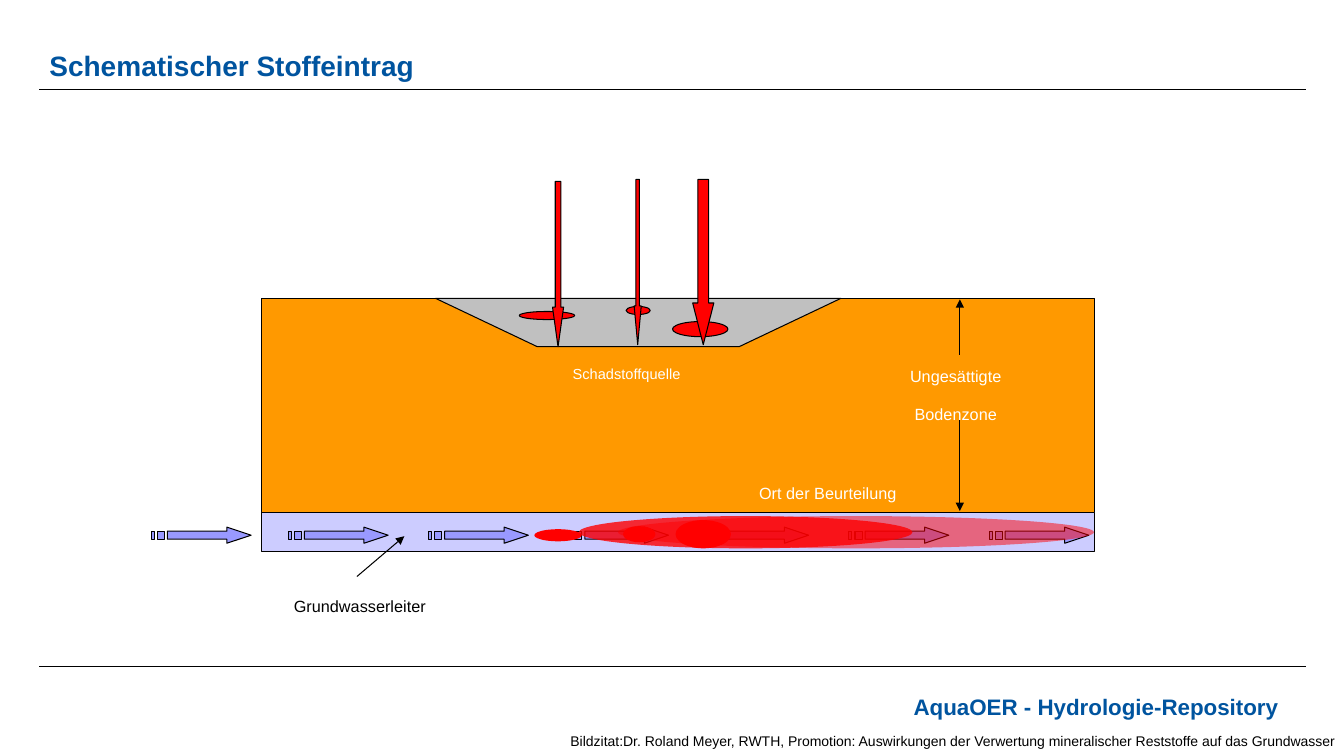
from lxml.etree import SubElement
from pptx import Presentation
from pptx.dml.color import RGBColor
from pptx.enum.shapes import MSO_CONNECTOR, MSO_SHAPE
from pptx.enum.text import MSO_ANCHOR, PP_ALIGN
from pptx.oxml.ns import qn
from pptx.util import Inches, Pt

W, H = 13.33, 7.5
BLUE, BLACK, WHITE, RED = "00549F", "000000", "FFFFFF", "FF0000"
ORANGE, GREY, LAVENDER, VIOLET = "FF9900", "C0C0C0", "CCCCFF", "9999FF"

LEFT, TOP, WIDTH = 2.59, 2.96, 8.27
SOIL_H, AQUIFER_H = 2.12, 0.39
AQUIFER_TOP = TOP + SOIL_H
FLOW_Y = AQUIFER_TOP + 0.23
FLOW_XS = [1.5] + [2.86 + 1.39 * i for i in range(6)]

PIT = [(4.32, TOP), (5.33, 3.44), (7.33, 3.44), (8.34, TOP)]
FLOW_PARTS = [
    [(0.75, -0.08), (0.75, -0.04), (0.16, -0.04), (0.16, 0.04),
     (0.75, 0.04), (0.75, 0.08), (0.99, 0)],
    [(0.06, -0.04), (0.06, 0.04), (0.13, 0.04), (0.13, -0.04)],
    [(0, -0.04), (0, 0.04), (0.03, 0.04), (0.03, -0.04)],
]
SOURCES = [(6.67, 3.19, 0.55, 0.15), (6.21, 3.04, 0.24, 0.08), (5.15, 3.09, 0.55, 0.08)]
PLUMES = [
    ((5.74, 5.12, 3.31, 0.32), 80),
    ((6.13, 5.12, 4.72, 0.32), 50),
    ((5.3, 5.25, 0.47, 0.12), 100),
    ((6.18, 5.22, 0.32, 0.16), 100),
    ((6.7, 5.16, 0.55, 0.28), 100),
]
INPUTS = [((6.87, 1.78, 0.21, 1.64), 1.97), ((6.29, 1.78, 0.07, 1.64), 5.48),
          ((5.48, 1.8, 0.11, 1.64), 3.57)]
RULES = [(0.39, y, 12.95, y) for y in (0.89, 6.61)]
POINTERS = [(9.52, 4.12, 9.52, 5.07), (9.52, 3.52, 9.52, 2.97), (3.54, 5.72, 4.01, 5.32)]
LABELS = [
    ("Ort der Beurteilung", (7.43, 4.56, 1.89, 0.33), dict(color=WHITE, size=20)),
    ("Grundwasserleiter", (2.39, 5.68, 2.36, 0.33), dict(size=20, align=PP_ALIGN.CENTER)),
    ("Schadstoffquelle", (5.37, 3.4, 1.69, 0.3),
     dict(color=WHITE, size=18, align=PP_ALIGN.CENTER)),
    ("Ungesättigte\nBodenzone", (8.53, 3.4, 1.9, 0.66),
     dict(color=WHITE, size=20, align=PP_ALIGN.CENTER)),
]
CREDIT = ("Bildzitat:Dr. Roland Meyer, RWTH, Promotion: Auswirkungen der Verwertung "
          "mineralischer Reststoffe auf das Grundwasser")


def rgb(value):
    return RGBColor.from_string(value)


def paint(sp, fill, outline=True, alpha=100):
    sp.shadow.inherit = False
    sp.fill.solid()
    sp.fill.fore_color.rgb = rgb(fill)
    if alpha < 100:
        color = sp.fill._xPr.find(qn("a:solidFill"))[0]
        SubElement(color, qn("a:alpha")).set("val", str(alpha * 1000))
    if outline:
        sp.line.color.rgb = rgb(BLACK)
        sp.line.width = Pt(0.75)
    else:
        sp.line.fill.background()


def add_preset(s, kind, box, fill, **look):
    sp = s.shapes.add_shape(kind, *map(Inches, box))
    paint(sp, fill, **look)
    return sp


def add_outline(s, parts, fill, x=0, y=0):
    contours = [[(Inches(x + px), Inches(y + py)) for px, py in part] for part in parts]
    builder = s.shapes.build_freeform(*contours[0][0])
    for i, points in enumerate(contours):
        if i:
            builder.move_to(*points[0])
        builder.add_line_segments(points[1:], close=True)
    paint(builder.convert_to_shape(), fill)


def add_line(s, ends, arrow=False):
    c = s.shapes.add_connector(MSO_CONNECTOR.STRAIGHT, *map(Inches, ends))
    c.line.color.rgb = rgb(BLACK)
    c.line.width = Pt(0.75)
    if arrow:
        SubElement(c.line._get_or_add_ln(), qn("a:tailEnd")).set("type", "triangle")
    SubElement(c._element.spPr, qn("a:effectLst"))


def add_text(s, text, box, size=10, color=BLACK, bold=False, align=PP_ALIGN.LEFT,
             anchor=MSO_ANCHOR.TOP, wrap=True, subscript=False, insets=(0.1, 0.05)):
    tf = s.shapes.add_textbox(*map(Inches, box)).text_frame
    tf.word_wrap = wrap
    tf.vertical_anchor = anchor
    tf.margin_left = tf.margin_right = Inches(insets[0])
    tf.margin_top = tf.margin_bottom = Inches(insets[1])
    for i, line in enumerate(text.split("\n")):
        p = tf.paragraphs[0] if i == 0 else tf.add_paragraph()
        p.alignment = align
        r = p.add_run()
        r.text = line
        r.font.name, r.font.size, r.font.bold = "Arial", Pt(size), bold
        r.font.color.rgb = rgb(color)
        if subscript:
            r.font._element.set("baseline", "-25000")


def main():
    prs = Presentation()
    prs.slide_width, prs.slide_height = Inches(W), Inches(H)
    s = prs.slides.add_slide(prs.slide_layouts[6])

    add_text(s, "AquaOER - Hydrologie-Repository", (8.38, 6.83, 4.4, 0.37),
             size=16, color=BLUE, bold=True, align=PP_ALIGN.RIGHT)
    for ends in RULES:
        add_line(s, ends)
    add_text(s, "Schematischer Stoffeintrag", (0.41, 0.22, 12.56, 0.59), size=20,
             color=BLUE, bold=True, anchor=MSO_ANCHOR.BOTTOM, insets=(0.08, 0))

    add_preset(s, MSO_SHAPE.RECTANGLE, (LEFT, TOP, WIDTH, SOIL_H), ORANGE)
    add_outline(s, [PIT], GREY)
    for box in SOURCES:
        add_preset(s, MSO_SHAPE.OVAL, box, RED)
    add_preset(s, MSO_SHAPE.RECTANGLE, (LEFT, AQUIFER_TOP, WIDTH, AQUIFER_H), LAVENDER)
    for x in FLOW_XS:
        add_outline(s, FLOW_PARTS, VIOLET, x, FLOW_Y)
    for box, alpha in PLUMES:
        add_preset(s, MSO_SHAPE.OVAL, box, RED, outline=False, alpha=alpha)

    for ends in POINTERS:
        add_line(s, ends, arrow=True)
    for text, box, style in LABELS:
        add_text(s, text, box, subscript=True, **style)
    add_text(s, CREDIT, (5.56, 7.22, 7.84, 0.27), wrap=False)
    for box, head in INPUTS:
        sp = add_preset(s, MSO_SHAPE.DOWN_ARROW, box, RED)
        sp.adjustments[0], sp.adjustments[1] = 0.5, head

    prs.save("out.pptx")


if __name__ == "__main__":
    main()
